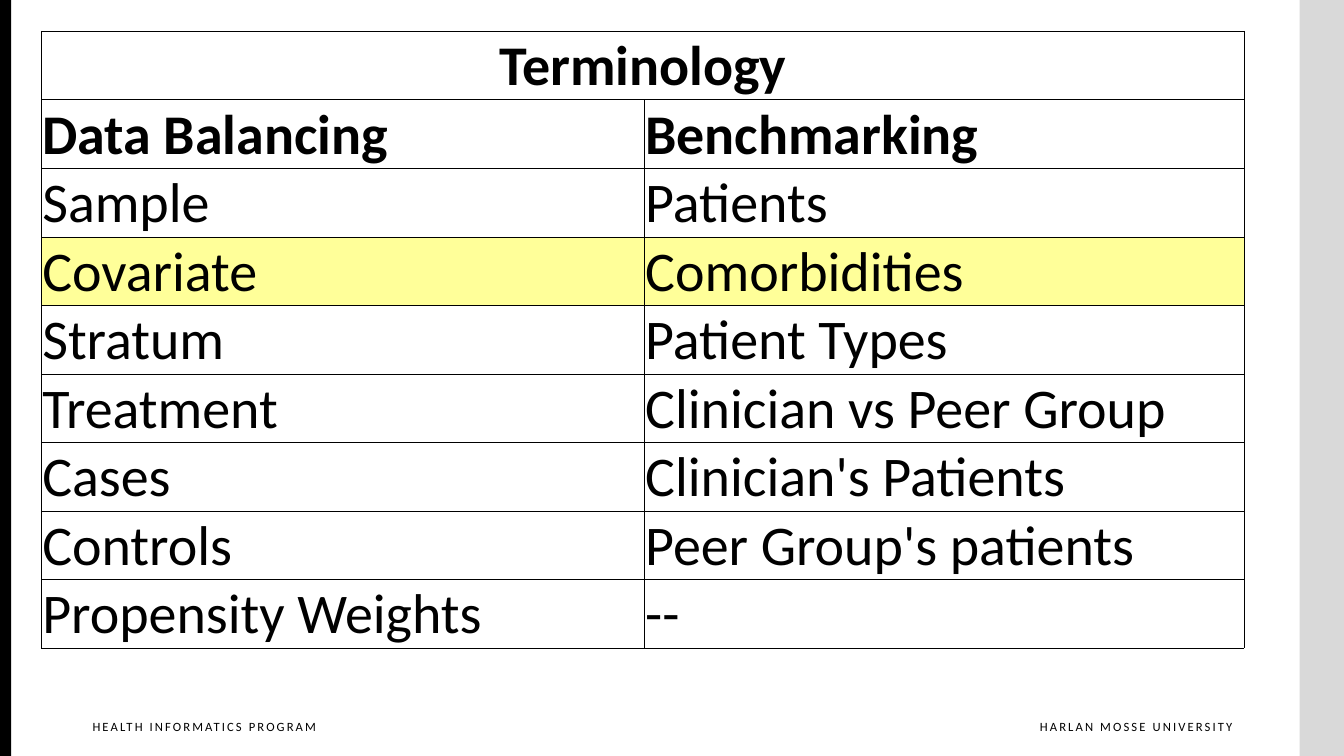
"""Build the terminology slide: a two-column table with side bands and footers."""
import dataclasses

import pptx
import pptx.dml.color
import pptx.enum.shapes
import pptx.enum.text
import pptx.oxml
import pptx.oxml.ns
import pptx.util

Inches = pptx.util.Inches
ALIGN = pptx.enum.text.PP_ALIGN


@dataclasses.dataclass(frozen=True)
class Theme:
    font: str = "Calibri"
    black: str = "000000"
    grey: str = "D9D9D9"
    yellow: str = "FFFF99"
    table_size: int = 40
    footer_size: int = 9
    border: float = 0.5


theme = Theme()


def write(tf, text, size, bold=False, align=ALIGN.LEFT, spacing=0):
    p = tf.paragraphs[0]
    p.alignment = align
    r = p.add_run()
    r.text = text
    r.font.name = theme.font
    r.font.size = pptx.util.Pt(size)
    r.font.bold = bold
    r.font.color.rgb = pptx.dml.color.RGBColor.from_string(theme.black)
    if spacing:
        r.font._element.set("spc", str(int(spacing * 100)))


def add_borders(cell):
    tcPr = cell._tc.get_or_add_tcPr()
    width = pptx.util.Pt(theme.border)
    for side in ("L", "R", "T", "B"):
        tcPr.append(pptx.oxml.parse_xml(
            f'<a:ln{side} {pptx.oxml.ns.nsdecls("a")} w="{width}"><a:solidFill>'
            f'<a:srgbClr val="{theme.black}"/></a:solidFill></a:ln{side}>'))


prs = pptx.Presentation()
prs.slide_width, prs.slide_height = Inches(13.33), Inches(7.5)
s = prs.slides.add_slide(prs.slide_layouts[6])

for left, width, color in [(12.89, 0.44, theme.grey), (0, 0.11, theme.black)]:
    band = s.shapes.add_shape(pptx.enum.shapes.MSO_SHAPE.RECTANGLE,
                              Inches(left), 0, Inches(width), prs.slide_height)
    band.shadow.inherit = False
    band.fill.solid()
    band.fill.fore_color.rgb = pptx.dml.color.RGBColor.from_string(color)
    band.line.fill.background()

footers = [
    (9.87, 2.35, "HARLAN MOSSE UNIVERSITY", ALIGN.RIGHT),
    (0.82, 2.54, "HEALTH INFORMATICS PROGRAM", ALIGN.LEFT),
]
for left, width, text, align in footers:
    tf = s.shapes.add_textbox(Inches(left), Inches(7.08), Inches(width), Inches(0.33)).text_frame
    tf.word_wrap = True
    tf.margin_right = 0
    write(tf, text, theme.footer_size, align=align, spacing=1.5)

terms = [
    ("Terminology", ""),
    ("Data Balancing", "Benchmarking"),
    ("Sample", "Patients"),
    ("Covariate", "Comorbidities"),
    ("Stratum", "Patient Types"),
    ("Treatment", "Clinician vs Peer Group"),
    ("Cases", "Clinician's Patients"),
    ("Controls", "Peer Group's patients"),
    ("Propensity Weights", "--"),
]
column_widths = [5.98, 5.95]
row_height = 0.68
header_rows = 2
highlighted = "Covariate"

table = s.shapes.add_table(len(terms), len(column_widths), Inches(0.41), Inches(0.31),
                           Inches(sum(column_widths)), Inches(row_height * len(terms))).table
table.first_row = table.horz_banding = False
for column, width in zip(table.columns, column_widths):
    column.width = Inches(width)
table.cell(0, 0).merge(table.cell(0, 1))

for i, row in enumerate(terms):
    table.rows[i].height = Inches(row_height)
    for j, text in enumerate(row):
        cell = table.cell(i, j)
        add_borders(cell)
        cell.margin_left = cell.margin_right = cell.margin_top = Inches(0.01)
        cell.margin_bottom = 0
        cell.vertical_anchor = pptx.enum.text.MSO_ANCHOR.MIDDLE
        if row[0] == highlighted:
            cell.fill.solid()
            cell.fill.fore_color.rgb = pptx.dml.color.RGBColor.from_string(theme.yellow)
        else:
            cell.fill.background()
        if text:
            write(cell.text_frame, text, theme.table_size, bold=i < header_rows,
                  align=ALIGN.CENTER if i == 0 else ALIGN.LEFT)

prs.save("out.pptx")
